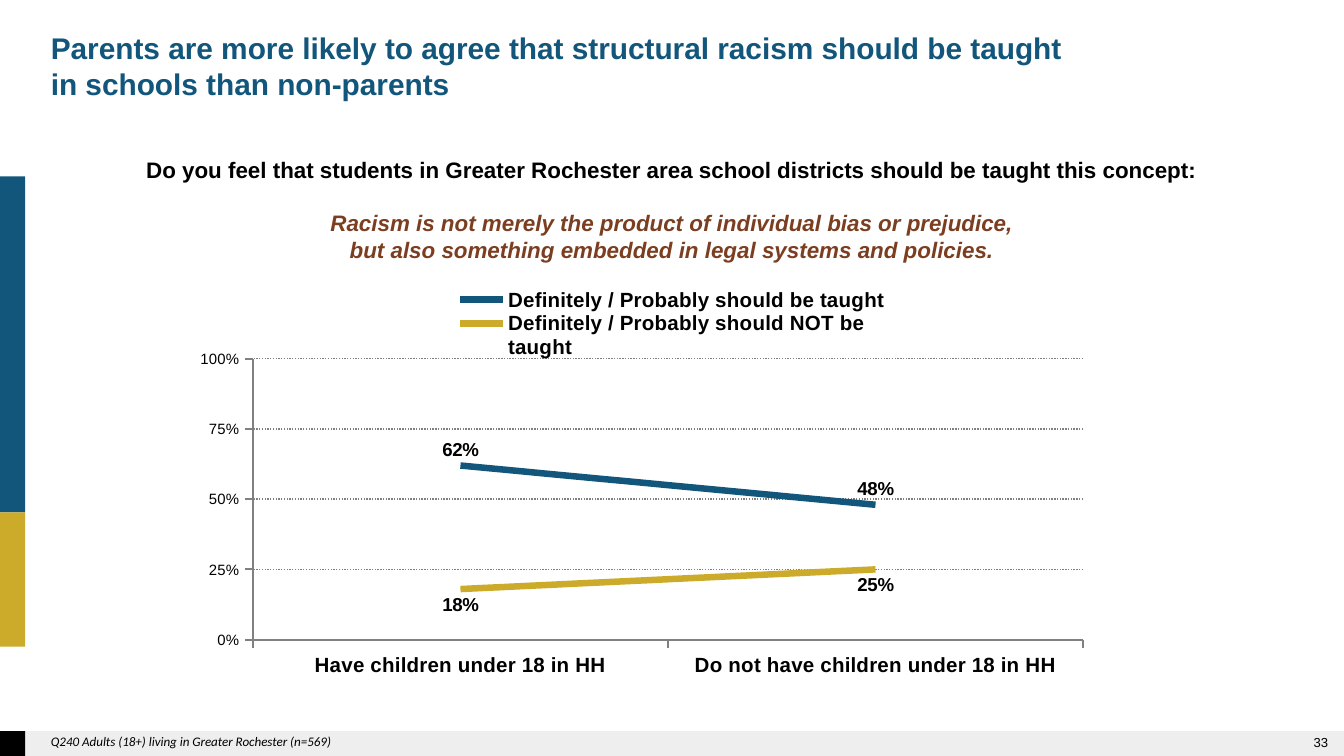
from dataclasses import dataclass
from typing import Any

from lxml.etree import SubElement
from pptx import Presentation
from pptx.chart.data import CategoryChartData
from pptx.dml.color import RGBColor
from pptx.enum.chart import XL_CHART_TYPE, XL_LABEL_POSITION, XL_LEGEND_POSITION
from pptx.enum.chart import XL_MARKER_STYLE, XL_TICK_MARK
from pptx.enum.dml import MSO_LINE
from pptx.enum.shapes import MSO_SHAPE
from pptx.enum.text import MSO_ANCHOR, MSO_AUTO_SIZE, PP_ALIGN
from pptx.oxml import parse_xml
from pptx.oxml.ns import nsdecls, qn
from pptx.util import Inches, Pt


@dataclass(frozen=True)
class Theme:
    blue: str = "12567C"
    gold: str = "CCAB2B"
    brown: str = "7C3E20"
    black: str = "000000"
    footer: str = "595959"
    axis: str = "808080"
    font: str = "Arial"
    note_font: str = "Calibri"
    title_size: float = 16
    body_size: float = 12
    category_size: float = 11
    label_size: float = 10
    axis_size: float = 8
    note_size: float = 7


@dataclass(frozen=True)
class Box:
    """Place on a grid of square cells, 100 columns across the slide."""
    column: float
    row: float
    columns: float
    rows: float

    def place(self) -> list[int]:
        return [round(value * CELL) for value in (self.column, self.row, self.columns, self.rows)]


@dataclass(frozen=True)
class Band:
    box: Box
    color: str
    opacity: int = 100


@dataclass(frozen=True)
class Line:
    text: str
    format: dict[str, Any]
    space_before: float = 0


@dataclass(frozen=True)
class TextBlock:
    box: Box
    lines: list[Line]
    alignment: PP_ALIGN = PP_ALIGN.LEFT
    anchor: MSO_ANCHOR = MSO_ANCHOR.TOP
    auto_size: MSO_AUTO_SIZE = MSO_AUTO_SIZE.NONE


@dataclass(frozen=True)
class Answer:
    name: str
    values: tuple[float, ...]
    color: str
    label_position: XL_LABEL_POSITION


THEME = Theme()
SLIDE_WIDTH = Inches(10)
SLIDE_HEIGHT = SLIDE_WIDTH * 9 // 16
CELL = SLIDE_WIDTH / 100

BANDS = [
    Band(Box(0, 54.4, 100, 1.9), THEME.footer, 10),
    Band(Box(0, 13.13, 1.88, 25), THEME.blue),
    Band(Box(0, 38.13, 1.88, 10), THEME.gold),
    Band(Box(0, 54.4, 1.88, 1.9), THEME.black),
]

QUESTION = {"size": THEME.body_size, "bold": True}
CONCEPT = QUESTION | {"italic": True, "color": THEME.brown}
TEXT_BLOCKS = [
    TextBlock(Box(76.5, 54.4, 23.3, 1.7), [Line("33", {"size": THEME.note_size})],
              PP_ALIGN.RIGHT, MSO_ANCHOR.MIDDLE),
    TextBlock(Box(9.4, 11.15, 81.2, 9.1), [
        Line("Do you feel that students in Greater Rochester area school districts "
             "should be taught this concept:", QUESTION),
        Line("Racism is not merely the product of individual bias or prejudice,", CONCEPT, 14),
        Line("but also something embedded in legal systems and policies.", CONCEPT),
    ], PP_ALIGN.CENTER, auto_size=MSO_AUTO_SIZE.SHAPE_TO_FIT_TEXT),
    TextBlock(Box(2.8, 1.7, 77.5, 6.4), [
        Line("Parents are more likely to agree that structural racism should be taught "
             "in schools than non-parents",
             {"size": THEME.title_size, "bold": True, "color": THEME.blue}),
    ]),
    TextBlock(Box(2.8, 54.1, 65.8, 2.2), [
        Line("Q240 Adults (18+) living in Greater Rochester (n=569)",
             {"size": THEME.note_size, "italic": True, "name": THEME.note_font}),
    ], auto_size=MSO_AUTO_SIZE.SHAPE_TO_FIT_TEXT),
]

CHART_BOX = Box(12.5, 20.15, 70.2, 31.2)
CATEGORIES = ["Have children under 18 in HH", "Do not have children under 18 in HH"]
ANSWERS = [
    Answer("Definitely / Probably should be taught", (0.62, 0.48), THEME.blue,
           XL_LABEL_POSITION.ABOVE),
    Answer("Definitely / Probably should NOT be taught", (0.18, 0.25), THEME.gold,
           XL_LABEL_POSITION.BELOW),
]


def set_font(font: Any, values: dict[str, Any]) -> None:
    values = {"name": THEME.font, "color": THEME.black} | values
    for name, value in values.items():
        if name == "color":
            font.color.rgb = RGBColor.from_string(value)
        else:
            setattr(font, name, Pt(value) if name == "size" else value)


def draw_band(slide: Any, band: Band) -> None:
    shape = slide.shapes.add_shape(MSO_SHAPE.RECTANGLE, *band.box.place())
    shape.shadow.inherit = False
    shape.line.fill.background()
    shape.fill.solid()
    shape.fill.fore_color.rgb = RGBColor.from_string(band.color)
    if band.opacity < 100:
        color = shape.fill._xPr.find(qn("a:solidFill"))[0]
        SubElement(color, qn("a:alpha"), val=str(band.opacity * 1000))


def draw_text(slide: Any, block: TextBlock) -> None:
    frame = slide.shapes.add_textbox(*block.box.place()).text_frame
    frame.word_wrap = True
    frame.auto_size = block.auto_size
    frame.vertical_anchor = block.anchor
    for index, line in enumerate(block.lines):
        paragraph = frame.add_paragraph() if index else frame.paragraphs[0]
        paragraph.alignment = block.alignment
        if line.space_before:
            paragraph.space_before = Pt(line.space_before)
        run = paragraph.add_run()
        run.text = line.text
        set_font(run.font, line.format)


def set_layout(parent: Any, after: str, shares: tuple[float, ...], inner: bool = False) -> None:
    """Fix the left, top, width and height of a chart part as shares of the chart."""
    for old in parent.findall(qn("c:layout")):
        parent.remove(old)
    target = '<c:layoutTarget val="inner"/>' if inner else ""
    modes = '<c:xMode val="edge"/><c:yMode val="edge"/>'
    sizes = "".join(f'<c:{name} val="{share}"/>' for name, share in zip("xywh", shares))
    layout = parse_xml(f'<c:layout {nsdecls("c")}><c:manualLayout>{target}{modes}{sizes}'
                       "</c:manualLayout></c:layout>")
    position = 0 if not after else parent.index(parent.find(qn(after))) + 1
    parent.insert(position, layout)


def style_line(line: Any, color: str, width: float) -> None:
    line.color.rgb = RGBColor.from_string(color)
    line.width = Pt(width)


def draw_chart(slide: Any, box: Box, answers: list[Answer]) -> None:
    data = CategoryChartData(number_format="0%")
    data.categories = CATEGORIES
    for answer in answers:
        data.add_series(answer.name, answer.values)
    chart = slide.shapes.add_chart(XL_CHART_TYPE.LINE, *box.place(), data).chart
    chart.has_title = False
    set_font(chart.font, {"size": THEME.axis_size, "bold": True})
    chart.has_legend = True
    chart.legend.position = XL_LEGEND_POSITION.TOP
    chart.legend.include_in_layout = False
    set_font(chart.legend.font, {"size": THEME.category_size, "bold": True})
    set_layout(chart.legend._element, "c:legendPos", (0.3, 0.04, 0.47, 0.17))
    plot = chart.plots[0]
    plot.vary_by_categories = False
    set_layout(chart._chartSpace.chart.plotArea, "", (0.09, 0.21, 0.88, 0.67), inner=True)

    for axis, size, bold in ((chart.category_axis, THEME.category_size, True),
                             (chart.value_axis, THEME.axis_size, False)):
        axis.major_tick_mark = XL_TICK_MARK.OUTSIDE
        set_font(axis.tick_labels.font, {"size": size, "bold": bold})
        style_line(axis.format.line, THEME.axis, 1)
    scale = {"minimum_scale": 0, "maximum_scale": 1, "major_unit": 0.25,
             "has_major_gridlines": True}
    for name, value in scale.items():
        setattr(chart.value_axis, name, value)
    chart.value_axis.tick_labels.number_format = "0%"
    chart.value_axis.tick_labels.number_format_is_linked = False
    gridline = chart.value_axis.major_gridlines.format.line
    style_line(gridline, THEME.axis, 0.75)
    gridline.dash_style = MSO_LINE.ROUND_DOT

    for series, answer in zip(plot.series, answers):
        series.smooth = True
        series.marker.style = XL_MARKER_STYLE.NONE
        style_line(series.format.line, answer.color, 3.5)
        labels = series.data_labels
        settings = {"show_value": True, "position": answer.label_position,
                    "number_format": "0%", "number_format_is_linked": False}
        for name, value in settings.items():
            setattr(labels, name, value)
        set_font(labels.font, {"size": THEME.label_size, "bold": True})


def main() -> None:
    presentation = Presentation()
    presentation.slide_width, presentation.slide_height = SLIDE_WIDTH, SLIDE_HEIGHT
    slide = presentation.slides.add_slide(presentation.slide_layouts[6])
    for band in BANDS:
        draw_band(slide, band)
    draw_chart(slide, CHART_BOX, ANSWERS)
    for block in TEXT_BLOCKS:
        draw_text(slide, block)
    presentation.save("out.pptx")


if __name__ == "__main__":
    main()
